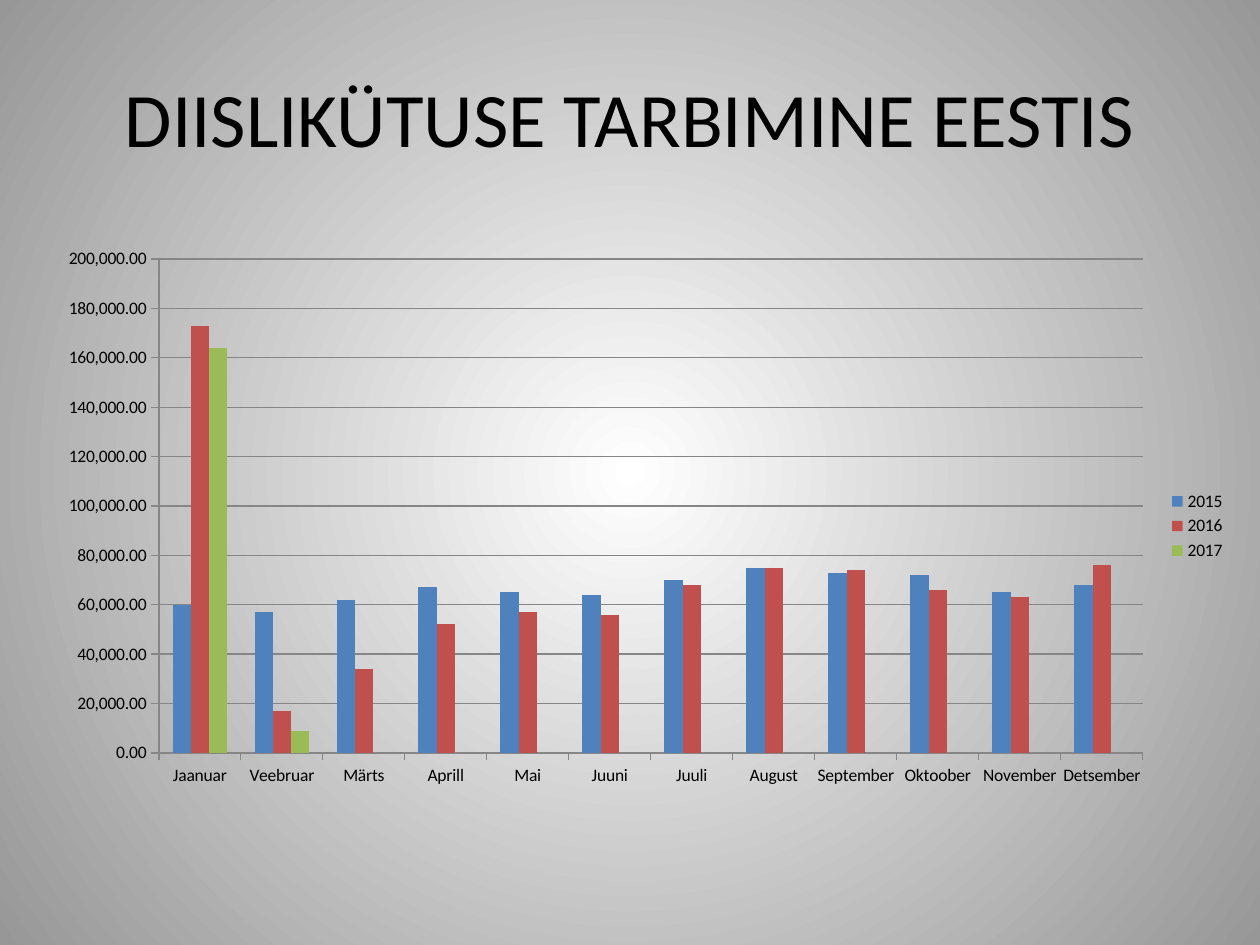
from lxml import etree
from pptx import Presentation
from pptx.chart.data import CategoryChartData
from pptx.dml.color import RGBColor
from pptx.enum import chart as ch, text
from pptx.oxml import parse_xml
from pptx.oxml.ns import nsdecls, qn
from pptx.util import Pt


def rgb(value):
    return RGBColor.from_string(value)


FONT = "Calibri"
BLACK, GREY = "000000", "868686"
MONTHS = ["Jaanuar", "Veebruar", "Märts", "Aprill", "Mai", "Juuni", "Juuli",
          "August", "September", "Oktoober", "November", "Detsember"]
# Thousands per month
CONSUMPTION = {
    "2015": ("4F81BD", [60, 57, 62, 67, 65, 64, 70, 75, 73, 72, 65, 68]),
    "2016": ("C0504D", [173, 17, 34, 52, 57, 56, 68, 75, 74, 66, 63, 76]),
    "2017": ("9BBB59", [164, 9] + [None] * 10),
}

prs = Presentation()
prs.slide_width, prs.slide_height = Pt(720), Pt(540)
s = prs.slides.add_slide(prs.slide_layouts[5])

# Background: circular gradient from the centre
fill = s.background.fill
fill.gradient()
for stop, color, position in zip(fill.gradient_stops, ("FFFFFF", "979797"), (0, 1)):
    stop.color.rgb = rgb(color)
    stop.position = position
grad = s.element.xpath(".//p:bgPr/a:gradFill")[0]
grad.replace(grad.find(qn("a:lin")), parse_xml(
    f'<a:path {nsdecls("a")} path="circle">'
    '<a:fillToRect l="50000" t="50000" r="50000" b="50000"/></a:path>'))

# Title
title = s.shapes.title
title.left, title.top, title.width, title.height = Pt(36), Pt(21.6), Pt(648), Pt(90)
tf = title.text_frame
tf.text = "DIISLIKÜTUSE TARBIMINE EESTIS"
tf.vertical_anchor = text.MSO_ANCHOR.MIDDLE
p = tf.paragraphs[0]
p.alignment = text.PP_ALIGN.CENTER
font = p.runs[0].font
font.name, font.size, font.color.rgb = FONT, Pt(44), rgb(BLACK)

# Chart
data = CategoryChartData(number_format="#,##0.00")
data.categories = MONTHS
for year, (color, values) in CONSUMPTION.items():
    data.add_series(year, [v and v * 1000 for v in values])
chart = s.shapes.add_chart(ch.XL_CHART_TYPE.COLUMN_CLUSTERED, Pt(23.75), Pt(122.4),
                           Pt(684), Pt(356.4), data).chart
chart.has_title = False
chart.font.name, chart.font.size = FONT, Pt(10)
chart.font.color.rgb = rgb(BLACK)
chart.has_legend = True
chart.legend.position = ch.XL_LEGEND_POSITION.RIGHT
chart.legend.include_in_layout = False

plot = chart.plots[0]
plot.gap_width, plot.overlap, plot.vary_by_categories = 150, 0, False
for series in plot.series:
    series.format.fill.solid()
    series.format.fill.fore_color.rgb = rgb(CONSUMPTION[series.name][0])

value_axis = chart.value_axis
value_axis.minimum_scale, value_axis.maximum_scale = 0, 200000
value_axis.major_unit = 20000
value_axis.has_major_gridlines = True
value_axis.tick_labels.number_format = "#,##0.00"
value_axis.tick_labels.number_format_is_linked = False
for axis in (chart.category_axis, value_axis):
    axis.major_tick_mark = ch.XL_TICK_MARK.OUTSIDE
for part in (chart.category_axis, value_axis, value_axis.major_gridlines):
    part.format.line.color.rgb = rgb(GREY)
    part.format.line.width = Pt(0.75)

# Fixed inner plot area, as fractions of the chart
plot_area = chart.element.xpath(".//c:plotArea")[0]
for old in plot_area.findall(qn("c:layout")):
    plot_area.remove(old)
layout = etree.Element(qn("c:layout"))
manual = etree.SubElement(layout, qn("c:manualLayout"))
for tag, value in (("layoutTarget", "inner"), ("xMode", "edge"), ("yMode", "edge"),
                   ("x", 0.098), ("y", 0.072), ("w", 0.822), ("h", 0.792)):
    etree.SubElement(manual, qn(f"c:{tag}")).set("val", str(value))
plot_area.insert(0, layout)

prs.save("out.pptx")
